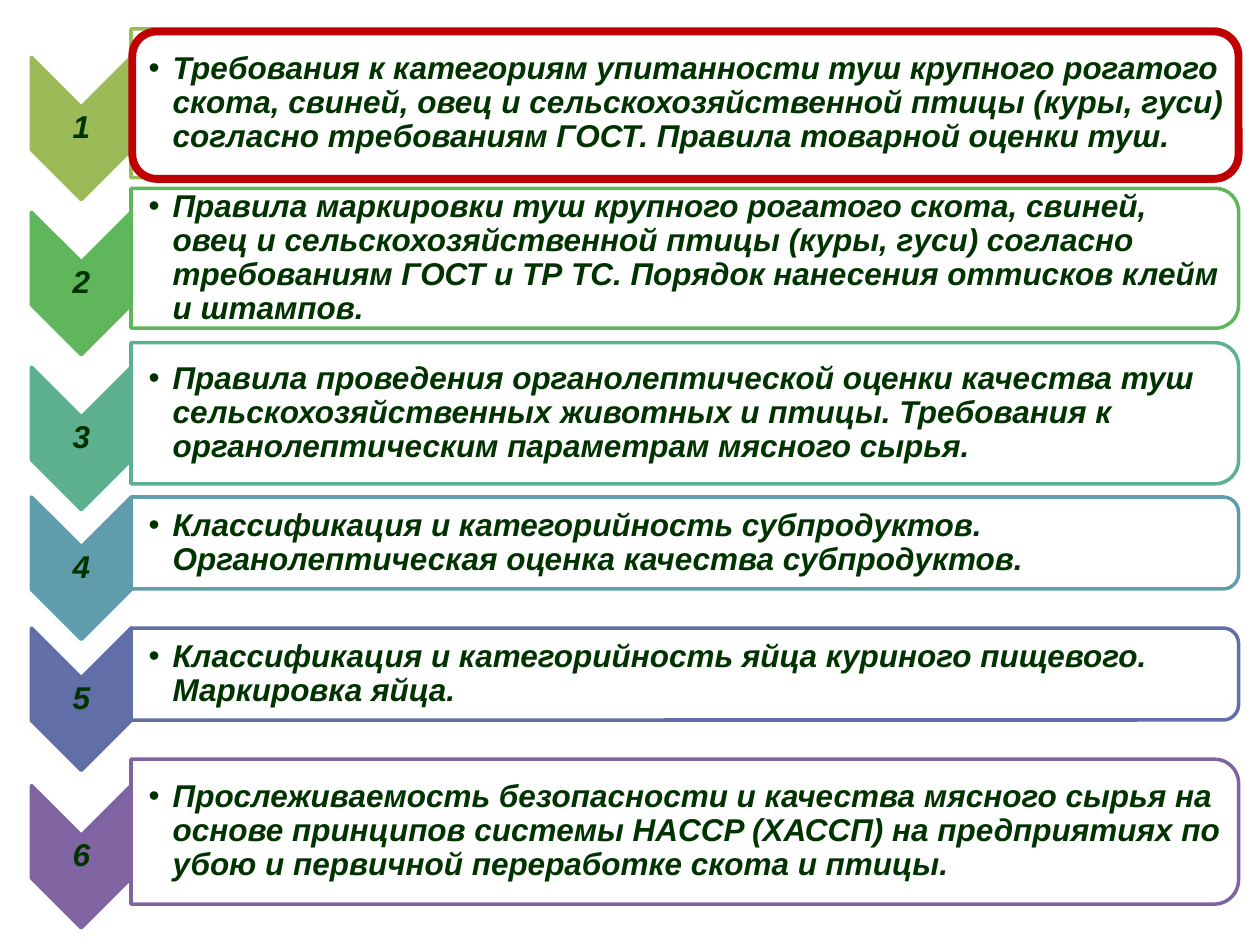
import pptx
import pptx.util
from lxml import etree
from pptx.dml.color import RGBColor
from pptx.enum.shapes import MSO_SHAPE
from pptx.enum.text import MSO_ANCHOR, PP_ALIGN
from pptx.oxml.ns import qn

PX = 9144  # 100 px to the inch
INK = RGBColor(0x00, 0x33, 0x00)
RED = RGBColor(0xC0, 0x00, 0x00)
WHITE = RGBColor(0xFF, 0xFF, 0xFF)

# Each row: colour, middle of the chevron, height of the box, wording
ROWS = [
    (RGBColor(0x9B, 0xBB, 0x59), 102, 118,
     "Требования к категориям упитанности туш крупного рогатого скота, свиней, "
     "овец и сельскохозяйственной птицы (куры, гуси) согласно требованиям ГОСТ. "
     "Правила товарной оценки туш."),
    (RGBColor(0x5F, 0xB6, 0x5B), 225, 111,
     "Правила маркировки туш крупного рогатого скота, свиней, овец и "
     "сельскохозяйственной птицы (куры, гуси) согласно требованиям ГОСТ и ТР ТС. "
     "Порядок нанесения оттисков клейм и штампов."),
    (RGBColor(0x5D, 0xB1, 0x8E), 348, 112,
     "Правила проведения органолептической оценки качества туш "
     "сельскохозяйственных животных и птицы. Требования к органолептическим "
     "параметрам мясного сырья."),
    (RGBColor(0x5F, 0x9D, 0xAC), 451, 73,
     "Классификация и категорийность субпродуктов. "
     "Органолептическая оценка качества субпродуктов."),
    (RGBColor(0x62, 0x6E, 0xA7), 555, 73,
     "Классификация и категорийность яйца куриного пищевого. Маркировка яйца."),
    (RGBColor(0x80, 0x64, 0xA2), 680, 115,
     "Прослеживаемость безопасности и качества мясного сырья на основе принципов "
     "системы HACCP (ХАССП) на предприятиях по убою и первичной переработке скота "
     "и птицы."),
]
LEFT, EDGE = 25, 104         # left of the chevrons, left of the boxes
CHEV_W, CHEV_H = 79, 113
BOX_W = 879
RISE = 20                    # a box sits this far above its chevron
CURVE = 0.05                 # room the round corners take from the text


def emu(*sizes):
    return [round(size * PX) for size in sizes]


def add_shape(slide, kind, x, y, w, h, fill, line, width, turn=0):
    """Place a shape by the area it shows, also when turned by 90 degrees."""
    if turn:
        x, y, w, h = x + (w - h) / 2, y + (h - w) / 2, h, w
    shape = slide.shapes.add_shape(kind, *emu(x, y, w, h))
    shape.rotation = turn
    shape.shadow.inherit = False
    if fill is None:
        shape.fill.background()
    else:
        shape.fill.solid()
        shape.fill.fore_color.rgb = fill
    shape.line.color.rgb = line
    shape.line.width = pptx.util.Pt(width)
    return shape


def add_text(slide, text, x, y, w, h, inset=1):
    box = slide.shapes.add_textbox(*emu(x, y, w, h))
    frame = box.text_frame
    frame.word_wrap = True
    frame.vertical_anchor = MSO_ANCHOR.MIDDLE
    frame.margin_left = inset * PX
    frame.margin_top = frame.margin_right = frame.margin_bottom = PX
    para = frame.paragraphs[0]
    para.text = text
    para.line_spacing = 0.9
    return para


def add_bullet(para):
    props = para._p.get_or_add_pPr()
    props.set("marL", str(19 * PX))
    props.set("indent", str(-19 * PX))
    etree.SubElement(props, qn("a:buFont")).set("typeface", "Arial")
    etree.SubElement(props, qn("a:buChar")).set("char", "•")


def set_font(para):
    font = para.font
    font.name = "Arial"
    font.size = pptx.util.Pt(18)
    font.bold = font.italic = True
    font.color.rgb = INK


deck = pptx.Presentation()
deck.slide_width, deck.slide_height = emu(1000, 750)
slide = deck.slides.add_slide(deck.slide_layouts[6])

for count, (color, mid, high, text) in enumerate(ROWS, 1):
    # Numbered chevron
    add_shape(slide, MSO_SHAPE.CHEVRON, LEFT, mid - CHEV_H / 2,
              CHEV_W, CHEV_H, color, color, 2, 90)
    label = add_text(slide, str(count), LEFT, mid - 17, CHEV_W, 34)
    label.alignment = PP_ALIGN.CENTER
    set_font(label)

    # Box with its wording
    top, trim = mid - RISE - high / 2, high * CURVE
    box = add_shape(slide, MSO_SHAPE.ROUND_2_SAME_RECTANGLE, EDGE, top,
                    BOX_W, high, WHITE, color, 2, 90)
    tint = box.fill._xPr.find(qn("a:solidFill"))[0]
    etree.SubElement(tint, qn("a:alpha")).set("val", "90000")
    para = add_text(slide, text, EDGE, top + trim,
                    BOX_W - trim, high - 2 * trim, 14)
    add_bullet(para)
    set_font(para)

# Red frame around the first box
add_shape(slide, MSO_SHAPE.ROUNDED_RECTANGLE, 105, 25, 878, 117, None, RED, 4.5)

deck.save("out.pptx")
